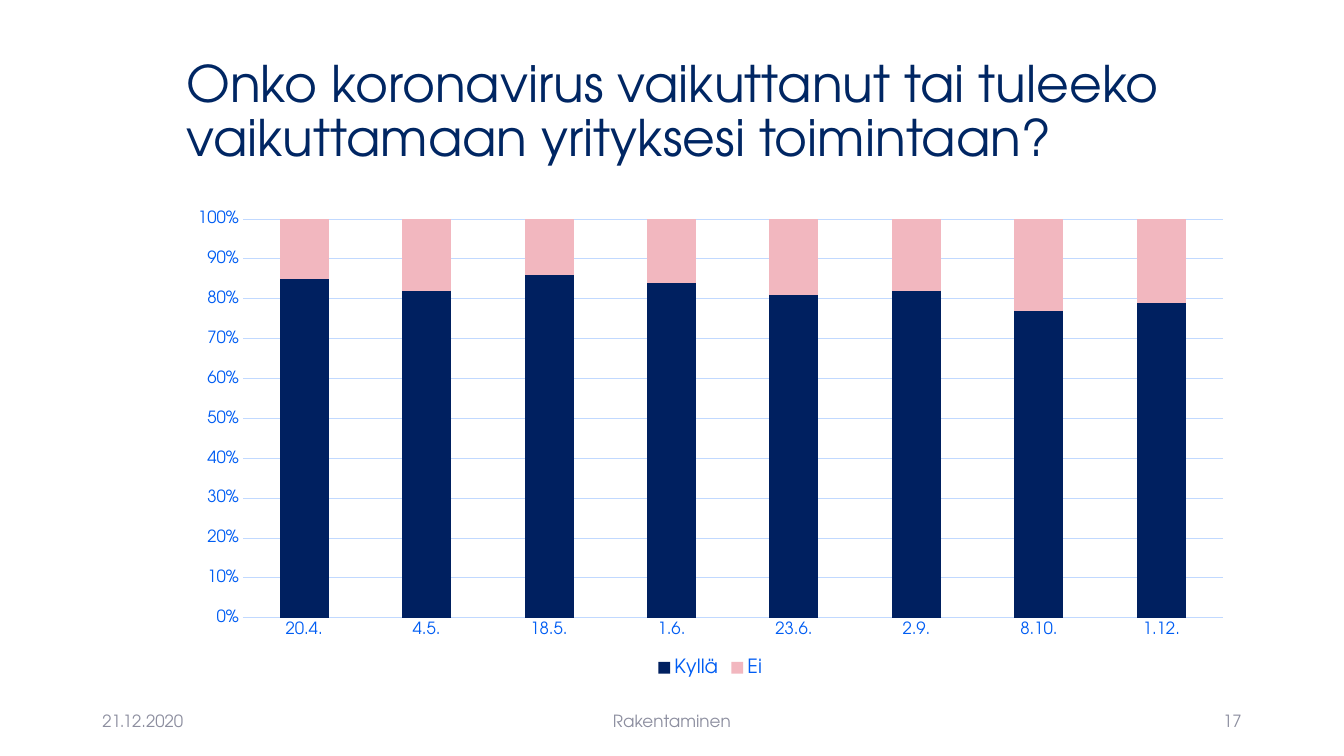
"""Build a slide with a full-height stacked column chart of survey answers."""
from dataclasses import dataclass

from pptx import Presentation
from pptx.chart.data import CategoryChartData
from pptx.dml.color import RGBColor
from pptx.enum.chart import XL_CHART_TYPE, XL_LEGEND_POSITION, XL_TICK_MARK
from pptx.enum.text import MSO_ANCHOR, PP_ALIGN
from pptx.util import Cm, Pt

STACKED = XL_CHART_TYPE.COLUMN_STACKED_100
BOTTOM = XL_LEGEND_POSITION.BOTTOM
NO_TICK = XL_TICK_MARK.NONE
MIDDLE = MSO_ANCHOR.MIDDLE
LEFT, CENTER, RIGHT = PP_ALIGN.LEFT, PP_ALIGN.CENTER, PP_ALIGN.RIGHT

TITLE = "Onko koronavirus vaikuttanut tai tuleeko vaikuttamaan yrityksesi toimintaan?"
DATES = ["20.4.", "4.5.", "18.5.", "1.6.", "23.6.", "2.9.", "8.10.", "1.12."]
YES_PERCENT = [85, 82, 86, 84, 81, 82, 77, 79]
ANSWERS = {"Kyllä": YES_PERCENT, "Ei": [100 - value for value in YES_PERCENT]}
FOOTERS = [("21.12.2020", LEFT, 7.62), ("Rakentaminen", CENTER, 11.43), ("17", RIGHT, 7.62)]

PAGE_WIDTH, PAGE_HEIGHT = 33.87, 19.05
BODY_LEFT, BODY_WIDTH = 4.45, 26.9
TITLE_TOP, TITLE_HEIGHT = 1.02, 3.68
CHART_TOP, CHART_HEIGHT = 5.08, 12.09
FOOTER_MARGIN, FOOTER_TOP, FOOTER_HEIGHT = 2.33, 17.66, 1.01


@dataclass(frozen=True)
class Theme:
    font: str = "TeX Gyre Adventor"
    title: str = "002663"
    footer: str = "8C8E9F"
    label: str = "005DF3"
    grid: str = "C1D9FF"
    series: tuple = ("002060", "F2B7BF")
    title_size: int = 36
    legend_size: int = 14
    small_size: int = 12
    line_width: float = 0.75


THEME = Theme()


def style_font(font, size, color):
    font.name = THEME.font
    font.size = Pt(size)
    font.color.rgb = RGBColor.from_string(color)


def style_line(line):
    line.color.rgb = RGBColor.from_string(THEME.grid)
    line.width = Pt(THEME.line_width)


def add_text(page, text, bounds, size, color, alignment=LEFT, spacing=1.0):
    box = page.shapes.add_textbox(*map(Cm, bounds))
    frame = box.text_frame
    frame.word_wrap = True
    frame.vertical_anchor = MIDDLE
    para = frame.paragraphs[0]
    para.text = text
    para.alignment = alignment
    para.line_spacing = spacing
    style_font(para.font, size, color)


def add_footers(page):
    lefts = {LEFT: lambda width: FOOTER_MARGIN,
             CENTER: lambda width: (PAGE_WIDTH - width) / 2,
             RIGHT: lambda width: PAGE_WIDTH - FOOTER_MARGIN - width}
    for text, alignment, width in FOOTERS:
        bounds = (lefts[alignment](width), FOOTER_TOP, width, FOOTER_HEIGHT)
        add_text(page, text, bounds, THEME.small_size, THEME.footer, alignment)


def add_answer_chart(page):
    data = CategoryChartData(number_format="0")
    data.categories = DATES
    for name, values in ANSWERS.items():
        data.add_series(name, values)
    bounds = map(Cm, (BODY_LEFT, CHART_TOP, BODY_WIDTH, CHART_HEIGHT))
    chart = page.shapes.add_chart(STACKED, *bounds, data).chart
    chart.has_title = False
    style_font(chart.font, THEME.small_size, THEME.label)

    plot = chart.plots[0]
    plot.gap_width = 150
    plot.overlap = 100
    plot.vary_by_categories = False
    for series, color in zip(plot.series, THEME.series):
        series.format.fill.solid()
        series.format.fill.fore_color.rgb = RGBColor.from_string(color)

    dates, shares = chart.category_axis, chart.value_axis
    for axis in (dates, shares):
        axis.major_tick_mark = axis.minor_tick_mark = NO_TICK
        style_font(axis.tick_labels.font, THEME.small_size, THEME.label)
    style_line(dates.format.line)
    shares.format.line.fill.background()
    shares.has_major_gridlines = True
    style_line(shares.major_gridlines.format.line)
    shares.minimum_scale, shares.maximum_scale, shares.major_unit = 0, 1, 0.1
    shares.tick_labels.number_format = "0%"
    shares.tick_labels.number_format_is_linked = False

    chart.has_legend = True
    chart.legend.position = BOTTOM
    chart.legend.include_in_layout = False
    style_font(chart.legend.font, THEME.legend_size, THEME.label)


def main():
    deck = Presentation()
    deck.slide_width, deck.slide_height = Cm(PAGE_WIDTH), Cm(PAGE_HEIGHT)
    page = deck.slides.add_slide(deck.slide_layouts[6])
    title_bounds = (BODY_LEFT, TITLE_TOP, BODY_WIDTH, TITLE_HEIGHT)
    add_text(page, TITLE, title_bounds, THEME.title_size, THEME.title, spacing=0.9)
    add_footers(page)
    add_answer_chart(page)
    deck.save("out.pptx")


if __name__ == "__main__":
    main()
